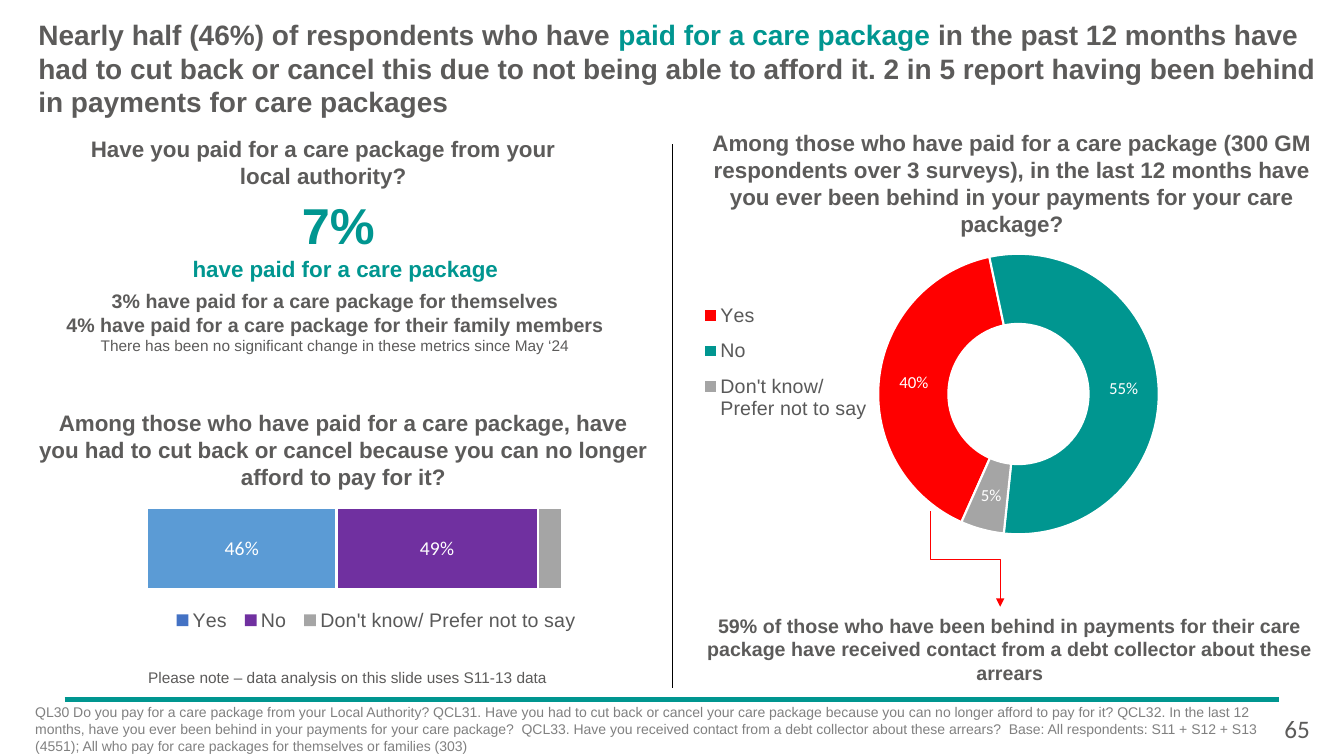
from lxml import etree
from pptx import Presentation
from pptx.chart.data import CategoryChartData
from pptx.dml.color import RGBColor
from pptx.enum.chart import XL_CHART_TYPE, XL_LEGEND_POSITION
from pptx.enum.shapes import MSO_CONNECTOR
from pptx.enum.text import MSO_ANCHOR, MSO_AUTO_SIZE, PP_ALIGN
from pptx.oxml import parse_xml
from pptx.oxml.ns import nsdecls, qn
from pptx.util import Inches, Pt

BAR, RING = XL_CHART_TYPE.BAR_STACKED, XL_CHART_TYPE.DOUGHNUT
BOTTOM, SIDE = XL_LEGEND_POSITION.BOTTOM, XL_LEGEND_POSITION.LEFT
LINE, ELBOW = MSO_CONNECTOR.STRAIGHT, MSO_CONNECTOR.ELBOW
LEFT, MID = PP_ALIGN.LEFT, PP_ALIGN.CENTER
HEX = {"text": "5C5B5A", "teal": "009690", "foot": "808080", "key": "595959",
       "red": "FF0000", "grey": "A5A5A5", "blue": "4472C4", "sky": "5B9BD5",
       "plum": "7030A0", "white": "FFFFFF", "black": "000000"}
RGB = {name: RGBColor.from_string(code) for name, code in HEX.items()}

deck = Presentation()
deck.slide_width, deck.slide_height = Inches(13.33), Inches(7.5)
slide = deck.slides.add_slide(deck.slide_layouts[5])
shapes = slide.shapes


def area(x, y, w, h):
    """Percentages of the slide's width and height as lengths."""
    wide, high = deck.slide_width / 100, deck.slide_height / 100
    return int(x * wide), int(y * high), int(w * wide), int(h * high)


def write(frame, paras, align):
    """Fill a frame; a paragraph is a list of (text, size, colour, bold)."""
    frame.word_wrap, frame.auto_size = True, MSO_AUTO_SIZE.NONE
    for i, runs in enumerate(paras):
        para = frame.add_paragraph() if i else frame.paragraphs[0]
        para.alignment = align
        for text, size, hue, bold in runs:
            run = para.add_run()
            run.text = text
            look = {"name": "Calibri" if text == "65" else "Arial",
                    "size": Pt(size), "bold": bold}
            for key, val in look.items():
                setattr(run.font, key, val)
            run.font.color.rgb = RGB[hue]


# Title
title = shapes.title
title.left, title.top, title.width, title.height = area(2.85, 2.27, 96.47, 13.47)
write(title.text_frame, [[
    ("Nearly half (46%) of respondents who have ", 20, "text", True),
    ("paid for a care package ", 20, "teal", True),
    ("in the past 12 months have had to cut back or cancel this due to not being "
     "able to afford it. 2 in 5 report having been behind in payments for care "
     "packages", 20, "text", True)]], LEFT)
title.text_frame.vertical_anchor = MSO_ANCHOR.MIDDLE

# Charts
unsure = "Don't know/ Prefer not to say"
cuts = CategoryChartData(number_format="0%")
cuts.categories = ["1"]
for name, val in [("Yes", 0.46), ("No", 0.49), (unsure, 0.06)]:
    cuts.add_series(name, [val])
late = CategoryChartData(number_format="0%")
late.categories = ["Yes", "No", unsure]
late.add_series("Series 1", [0.4, 0.55, 0.05])

charts = []
for kind, spot, data, side, inner, key in [
        (BAR, (2.48, 61.07, 49.06, 27.6), cuts, BOTTOM,
         (0.173, 0.025, 0.748, 0.782), (0.2, 0.69, 0.64, 0.14)),
        (RING, (51.61, 33.2, 45.61, 53.47), late, SIDE,
         (0.301, 0.007, 0.458, 0.694), (0.01, 0.1, 0.28, 0.35))]:
    chart = shapes.add_chart(kind, *area(*spot), data).chart
    charts.append(chart)
    chart.has_title = False
    chart.font.size, chart.font.name = Pt(10), "Calibri"
    chart.has_legend = True
    legend = chart.legend
    legend.position, legend.include_in_layout = side, False
    legend.font.size, legend.font.name = Pt(14), "Arial"
    legend.font.color.rgb = RGB["key"]

    # Fixed places for the plot and the legend
    plot = chart._chartSpace.chart.plotArea
    for part, box, first in [(plot, inner, 0), (legend._element, key, 1)]:
        for old in part.findall(qn("c:layout")):
            part.remove(old)
        layout = parse_xml(f"<c:layout {nsdecls('c')}><c:manualLayout/></c:layout>")
        marks = [("layoutTarget", "inner")] if part is plot else []
        marks += [("xMode", "edge"), ("yMode", "edge"), *zip("xywh", box)]
        for tag, val in marks:
            etree.SubElement(layout[0], qn(f"c:{tag}")).set("val", str(val))
        part.insert(first, layout)

bar, ring = charts
bar.plots[0].gap_width, bar.plots[0].overlap = 100, 100
bar.value_axis.minimum_scale, bar.value_axis.maximum_scale = 0, 1.2
bar.value_axis.has_major_gridlines = False
bar.category_axis.visible = bar.value_axis.visible = False
ring.plots[0].vary_by_categories = True
pie = ring.plots[0]._element
pie.find(qn("c:firstSliceAng")).set("val", "204")
pie.find(qn("c:holeSize")).set("val", "55")

# Colours of the bar parts and ring slices
parts = []
for row, hue, tint in zip(bar.series, ["blue", "plum", "grey"], ["sky", "plum", "grey"]):
    row.format.fill.solid()
    row.format.fill.fore_color.rgb = RGB[hue]
    parts.append((row.points[0], tint))
parts += [(ring.series[0].points[i], hue) for i, hue in enumerate(["red", "teal", "grey"])]
for point, hue in parts:
    point.format.fill.solid()
    point.format.fill.fore_color.rgb = RGB[hue]
    point.format.line.color.rgb = RGB["white"]
    point.format.line.width = Pt(1.5)

# Value labels
for row, size in [(bar.series[0], 14), (bar.series[1], 14), (ring.series[0], 12)]:
    labels = row.data_labels
    labels.show_value = True
    labels.number_format, labels.number_format_is_linked = "0%", False
    labels.font.size, labels.font.name = Pt(size), "Calibri"
    labels.font.color.rgb = RGB["white"]

# Questions and findings
for spot, paras in [
        ((4.58, 17.87, 38.93, 7.2),
         [[("Have you paid for a care package from your", 16, "text", True)],
          [("local authority?", 16, "text", True)]]),
        ((2.7, 54.13, 45.69, 10.8),
         [[("Among those who have paid for a care package, have you had to cut back or "
            "cancel because you can no longer afford to pay for it?", 16, "text", True)]]),
        ((2.1, 38.27, 45.69, 8.93),
         [[("3% have paid for a care package for themselves", 14, "text", True)],
          [("4% have paid for a care package for their family members", 14, "text", True)],
          [("There has been no significant change in these metrics since May ‘24",
            11, "text", False)]]),
        ((2.85, 25.73, 45.69, 11.73),
         [[("7% ", 36, "teal", True)],
          [("have paid for a care package", 16, "teal", True)]]),
        ((52.44, 17.07, 45.69, 14.4),
         [[("Among those who have paid for a care package (300 GM respondents over 3 "
            "surveys), in the last 12 months have you ever been behind in your payments "
            "for your care package?", 16, "text", True)]]),
        ((52.29, 81.2, 45.69, 9.47),
         [[("59% of those who have been behind in payments for their care package have "
            "received contact from a debt collector about these arrears",
            14, "text", True)]])]:
    write(shapes.add_textbox(*area(*spot)).text_frame, paras, MID)

# No inner margins for the title and the findings
for shape in shapes:
    if shape.has_text_frame:
        for edge in ("left", "top", "right", "bottom"):
            setattr(shape.text_frame, f"margin_{edge}", 0)

# Notes at the foot
for spot, text, size, hue in [
        ((1.88, 92.4, 92.95, 6.93),
         "QL30 Do you pay for a care package from your Local Authority? QCL31. Have you "
         "had to cut back or cancel your care package because you can no longer afford to "
         "pay for it? QCL32. In the last 12 months, have you ever been behind in your "
         "payments for your care package?  QCL33. Have you received contact from a debt "
         "collector about these arrears?  Base: All respondents: S11 + S12 + S13 (4551); "
         "All who pay for care packages for themselves or families (303)", 10, "foot"),
        ((94.82, 93.73, 3.98, 5.33), "65", 18, "text"),
        ((10.28, 87.73, 32.26, 3.87),
         "Please note – data analysis on this slide uses S11-13 data", 11, "text")]:
    write(shapes.add_textbox(*area(*spot)).text_frame, [[(text, size, hue, False)]], LEFT)

# Rules and the arrow from the ring
for kind, ends, hue, width in [
        (LINE, (4.8, 92.53, 95.2, 92.53), "teal", 3),
        (LINE, (50, 19.07, 50, 91.07), "black", 0.5),
        (ELBOW, (75.39, 69.33, 68.27, 78.53), "red", 0.5)]:
    link = shapes.add_connector(kind, *area(*ends))
    link.line.color.rgb, link.line.width = RGB[hue], Pt(width)
    props = link._element.spPr
    if kind == ELBOW:
        props.xfrm.set("rot", str(270 * 60000))
        etree.SubElement(props.find(qn("a:ln")), qn("a:tailEnd")).set("type", "triangle")
    etree.SubElement(props, qn("a:effectLst"))

deck.save("out.pptx")
